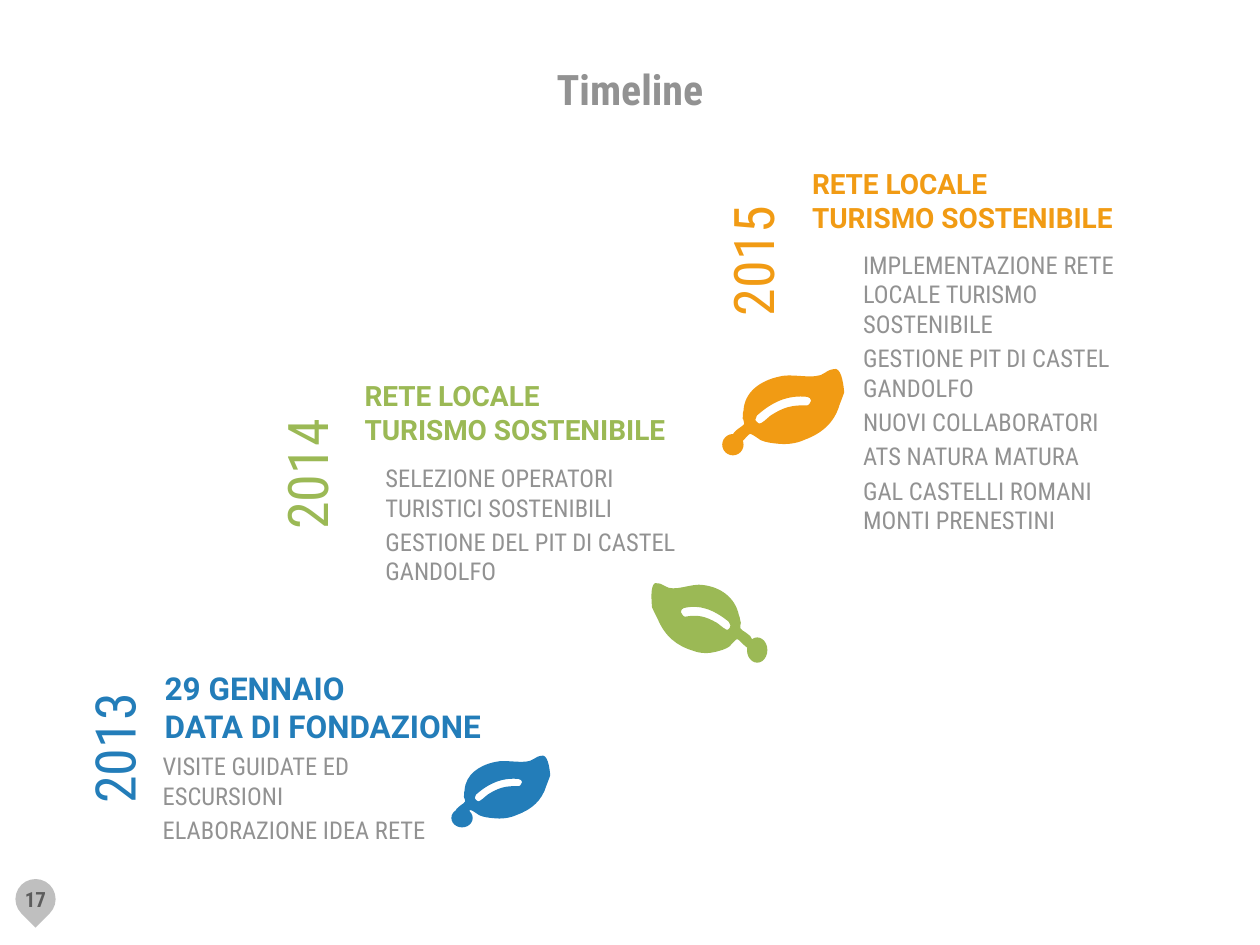
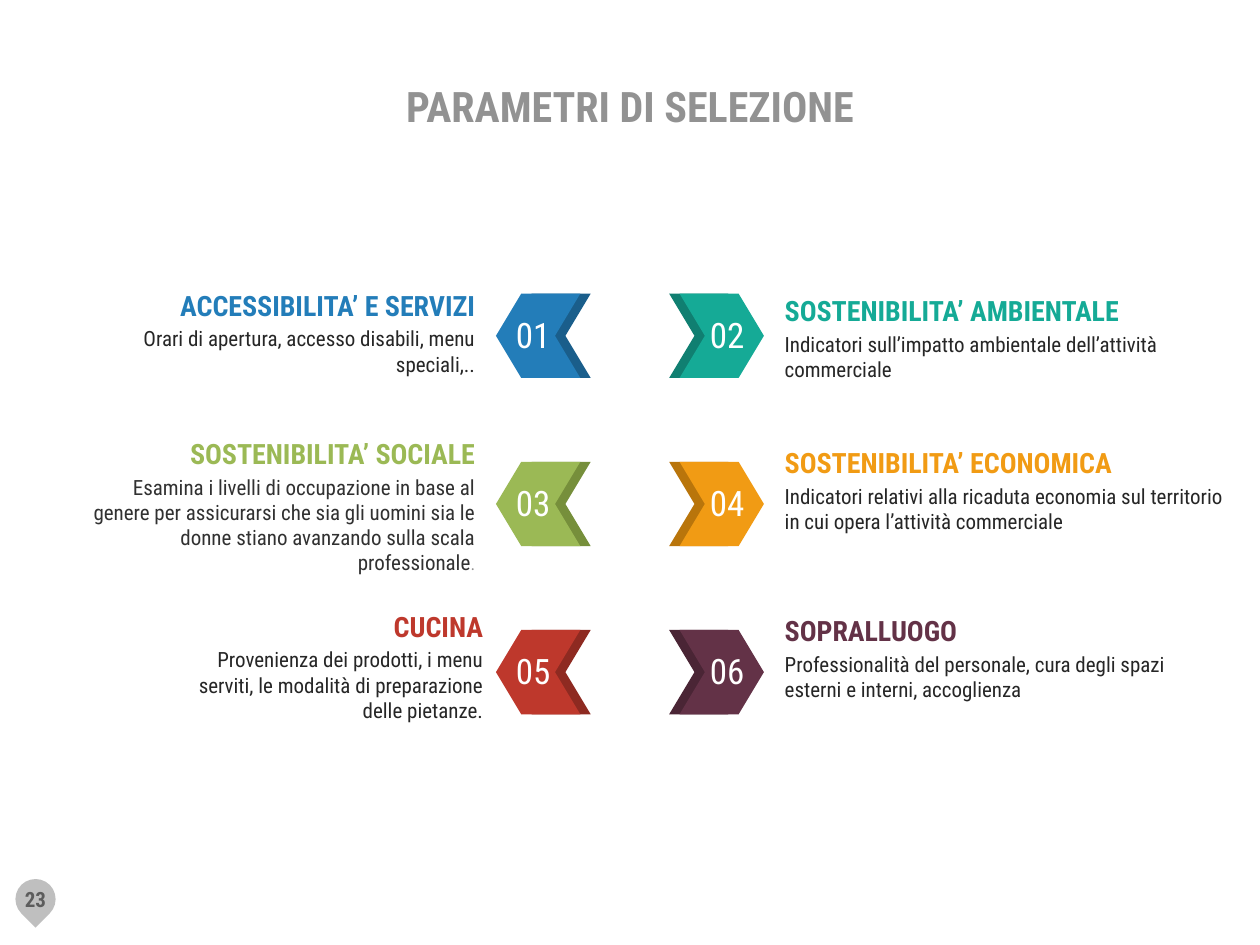
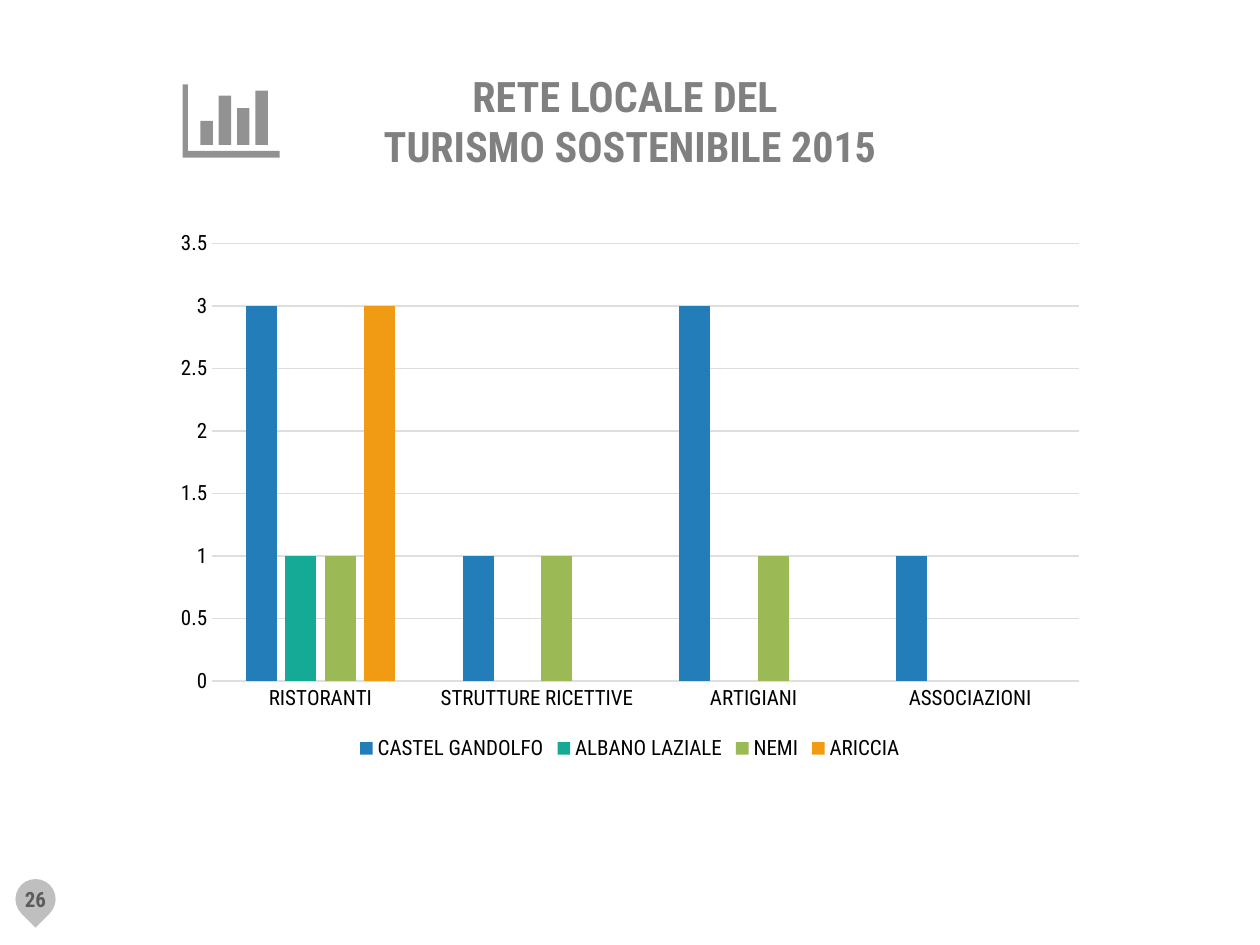
from dataclasses import dataclass

from lxml import etree
from pptx import Presentation
from pptx import util as u
from pptx.chart import data as cd
from pptx.dml import color as dml
from pptx.enum import chart as ch
from pptx.enum import shapes as es
from pptx.enum import text as et
from pptx.oxml import ns
from pptx.util import Cm


@dataclass(frozen=True)
class Theme:
    sans: str = "Roboto"
    condensed: str = "Roboto Condensed"
    blue: str = "237DB9"
    teal: str = "15AA96"
    green: str = "9BB955"
    orange: str = "F19B14"
    red: str = "BE382C"
    plum: str = "633247"
    grey: str = "929292"
    dark_grey: str = "808080"
    ink: str = "262626"
    soft_ink: str = "313131"
    black: str = "000000"
    white: str = "FFFFFF"
    grid: str = "DEDEDE"
    marker: str = "BFBFBF"
    marker_text: str = "5C5C5C"
    year_size: float = 32
    title_size: float = 24
    number_size: float = 20
    founding_size: float = 18
    heading_size: float = 16
    list_size: float = 14
    body_size: float = 12
    tail_size: float = 10


T = Theme()
Box = tuple[float, float, float, float]  # left, top, width, height in cm
Point = tuple[float, float]


@dataclass(frozen=True)
class Line:
    text: str
    size: float
    color: str
    bold: bool = False
    font: str = T.condensed
    tail: str = ""  # small grey ending


@dataclass(frozen=True)
class Milestone:
    year: str
    heading: tuple[str, str]
    items: tuple[str, ...]
    color: str
    year_at: Point
    heading_box: Box
    list_box: Box
    heading_size: float = T.heading_size


@dataclass(frozen=True)
class Leaf:
    color: str
    blade: Box
    stem: Box
    rotation: float
    mirrored: bool = False


@dataclass(frozen=True)
class Criterion:
    title: str
    text: str
    color: str
    shade: str
    box: Box
    ink: str = T.ink
    tail: str = ""


MILESTONES = (
    Milestone("2013", ("29 GENNAIO", "DATA DI FONDAZIONE"),
              ("VISITE GUIDATE ED ESCURSIONI", "ELABORAZIONE IDEA RETE"),
              T.blue, (0.77, 14.27), (3.32, 13.47, 6.91, 1.55),
              (3.28, 15.15, 5.87, 2.51), T.founding_size),
    Milestone("2014", ("RETE LOCALE", "TURISMO SOSTENIBILE"),
              ("SELEZIONE OPERATORI TURISTICI SOSTENIBILI",
               "GESTIONE DEL PIT DI CASTEL GANDOLFO"),
              T.green, (4.65, 8.75), (7.35, 7.63, 6.58, 1.37),
              (7.77, 9.34, 5.87, 2.51)),
    Milestone("2015", ("RETE LOCALE", "TURISMO SOSTENIBILE"),
              ("IMPLEMENTAZIONE RETE LOCALE TURISMO SOSTENIBILE",
               "GESTIONE PIT DI CASTEL GANDOLFO", "NUOVI COLLABORATORI",
               "ATS NATURA MATURA", "GAL CASTELLI ROMANI MONTI PRENESTINI"),
              T.orange, (13.64, 4.44), (16.37, 3.35, 6.58, 1.37),
              (17.4, 5.04, 5.87, 5.87)),
)

LEAVES = (
    Leaf(T.green, (13.22, 11.55, 1.8, 1.75), (15.06, 12.85, 0.41, 0.51), -14.5, True),
    Leaf(T.orange, (14.83, 7.34, 2.15, 1.73), (14.56, 8.75, 0.43, 0.43), 6.2),
    Leaf(T.blue, (9.23, 15.15, 1.83, 1.45), (9.1, 16.3, 0.43, 0.38), 6.2),
)

# Bezier points of the leaf, in percent of its frame: start, then three per curve
BLADE = (
    (97, 41), (94, 62), (84, 76), (68, 86), (60, 92), (51, 94), (43, 94),
    (38, 94), (32, 94), (27, 92), (24, 90), (20, 87), (17, 86),
    (14, 86), (10, 100), (5, 100), (3, 100), (2, 98), (0, 94),
    (0, 94), (0, 92), (0, 92), (0, 84), (10, 78), (10, 75),
    (10, 75), (9, 70), (8, 69), (9, 66), (7, 65), (8, 60),
    (7, 38), (21, 23), (38, 16), (50, 10), (72, 16), (80, 6),
    (83, 3), (85, 1), (90, 0), (96, 1), (99, 20), (100, 26),
    (99, 32), (98, 36), (97, 41),
)
VEIN = (
    (66, 36), (48, 36), (34, 46), (21, 64), (21, 66), (20, 66), (20, 69),
    (20, 70), (23, 73), (24, 73), (24, 73), (26, 72), (26, 72),
    (30, 68), (32, 64), (34, 62), (45, 51), (53, 47), (67, 46),
    (68, 46), (69, 44), (70, 40), (70, 38), (68, 36), (66, 36),
)

CRITERIA = (
    Criterion("ACCESSIBILITA’ E SERVIZI",
              "Orari di apertura, accesso disabili, menu speciali,..",
              T.blue, "1A5E8B", (2.11, 5.81, 7.47, 1.8)),
    Criterion("SOSTENIBILITA’ AMBIENTALE",
              "Indicatori sull’impatto ambientale dell’attività commerciale",
              T.teal, "107F71", (15.82, 5.92, 9.14, 1.8)),
    Criterion("SOSTENIBILITA’ SOCIALE",
              "Esamina i livelli di occupazione in base al genere per assicurarsi "
              "che sia gli uomini sia le donne stiano avanzando sulla scala "
              "professionale",
              T.green, "768F3B", (1.71, 8.8, 7.87, 2.84), T.soft_ink, "."),
    Criterion("SOSTENIBILITA’ ECONOMICA",
              "Indicatori relativi alla ricaduta economia sul territorio in cui "
              "opera l’attività commerciale",
              T.orange, "B9750B", (15.82, 8.99, 9.14, 1.8)),
    Criterion("CUCINA",
              "Provenienza dei prodotti, i menu serviti, le modalità di "
              "preparazione delle pietanze.",
              T.red, "8E2A21", (3.29, 12.28, 6.45, 2.34)),
    Criterion("SOPRALLUOGO",
              "Professionalità del personale, cura degli spazi esterni e interni, "
              "accoglienza",
              T.plum, "4A2535", (15.82, 12.37, 7.87, 1.8)),
)

CATEGORIES = ("RISTORANTI", "STRUTTURE RICETTIVE", "ARTIGIANI", "ASSOCIAZIONI")
SERIES = (
    ("CASTEL GANDOLFO", (3, 1, 3, 1), T.blue),
    ("ALBANO LAZIALE", (1, None, None, None), T.teal),
    ("NEMI", (1, 1, 1, None), T.green),
    ("ARICCIA", (3, None, None, None), T.orange),
)


# Shared helpers
def cm(box: Box) -> list[int]:
    return [Cm(v) for v in box]


def rgb(value: str) -> dml.RGBColor:
    return dml.RGBColor.from_string(value)


def set_font(font, size: float, color: str, bold: bool = False,
             name: str = T.condensed) -> None:
    font.size, font.bold, font.name = u.Pt(size), bold, name
    font.color.rgb = rgb(color)


def paint(sp, color: str) -> None:
    sp.fill.solid()
    sp.fill.fore_color.rgb = rgb(color)
    sp.line.fill.background()
    sp.shadow.inherit = False


def write(tf, lines: list[Line], align=et.PP_ALIGN.LEFT, anchor=et.MSO_ANCHOR.TOP,
          wrap: bool = True, inset: bool = False, spaced: bool = False) -> None:
    tf.auto_size = et.MSO_AUTO_SIZE.NONE
    tf.word_wrap, tf.vertical_anchor = wrap, anchor
    if not inset:
        tf.margin_left = tf.margin_top = tf.margin_right = tf.margin_bottom = 0
    for i, line in enumerate(lines):
        p = tf.add_paragraph() if i else tf.paragraphs[0]
        p.text, p.alignment = line.text, align
        p.space_before = u.Pt(0.2 * line.size if spaced and i else 0)
        if line.tail:
            set_font(p.runs[0].font, line.size, line.color, line.bold, line.font)
            r = p.add_run()
            r.text = line.tail
            set_font(r.font, T.tail_size, T.grey)
        else:
            set_font(p.font, line.size, line.color, line.bold, line.font)


def add_text(tree, box: Box, lines: list[Line], **layout):
    sp = tree.add_textbox(*cm(box))
    write(sp.text_frame, lines, **layout)
    return sp


def add_shape(tree, kind, box: Box, color: str):
    sp = tree.add_shape(kind, *cm(box))
    paint(sp, color)
    return sp


def add_outline(tree, contours: list[list[Point]], color: str):
    """Draw closed contours, given in cm, as one shape."""
    fb = None
    for contour in contours:
        points = [(Cm(x), Cm(y)) for x, y in contour]
        if fb is None:
            fb = tree.build_freeform(*points[0])
        else:
            fb.move_to(*points[0])
        fb.add_line_segments(points[1:], close=True)
    sp = fb.convert_to_shape()
    paint(sp, color)
    return sp


def bend(sp) -> None:
    """Turn every three line segments of an outline into one Bezier curve."""
    segments = list(sp.element.iter(ns.qn("a:lnTo")))
    for i in range(0, len(segments), 3):
        curve = etree.Element(ns.qn("a:cubicBezTo"))
        segments[i].addprevious(curve)
        for segment in segments[i:i + 3]:
            curve.append(segment[0])
            segment.getparent().remove(segment)


def new_slide(prs, title: str, box: Box, page: int, color: str = T.grey):
    slide = prs.slides.add_slide(prs.slide_layouts[5])
    sp = slide.shapes.title
    sp.left, sp.top, sp.width, sp.height = cm(box)
    write(sp.text_frame, [Line(title, T.title_size, color, True)],
          align=et.PP_ALIGN.CENTER, anchor=et.MSO_ANCHOR.MIDDLE, wrap=False)
    # Page marker
    drop = add_shape(slide.shapes, es.MSO_SHAPE.TEAR, (0.31, 17.72, 0.81, 0.81), T.marker)
    drop.rotation = 135.1
    add_text(slide.shapes, (0.08, 17.74, 1.27, 0.76),
             [Line(str(page), T.body_size, T.marker_text, True)],
             align=et.PP_ALIGN.CENTER, anchor=et.MSO_ANCHOR.MIDDLE, inset=True)
    return slide


# Timeline
def add_leaf(slide, leaf: Leaf) -> None:
    left, top, width, height = leaf.blade
    contours = [[(left + width * (100 - x if leaf.mirrored else x) / 100,
                  top + height * y / 100) for x, y in part]
                for part in (BLADE, VEIN)]
    tree = slide.shapes.add_group_shape().shapes
    blade = add_outline(tree, contours, leaf.color)
    bend(blade)
    blade.rotation = leaf.rotation
    add_shape(tree, es.MSO_SHAPE.OVAL, leaf.stem, leaf.color)


def add_milestone(slide, m: Milestone) -> None:
    tree = slide.shapes.add_group_shape().shapes
    year = add_text(tree, (*m.year_at, 3.05, 1.63), [Line(m.year, T.year_size, m.color)],
                    align=et.PP_ALIGN.CENTER, wrap=False, inset=True)
    year.rotation = 270
    add_text(tree, m.heading_box,
             [Line(s, m.heading_size, m.color, True, T.sans) for s in m.heading],
             anchor=et.MSO_ANCHOR.MIDDLE, wrap=False)
    add_text(tree, m.list_box, [Line(s, T.list_size, T.grey) for s in m.items], spaced=True)


def timeline(prs) -> None:
    slide = new_slide(prs, "Timeline", (4.87, 0.97, 15.66, 1.65), 17)
    for leaf in LEAVES:
        add_leaf(slide, leaf)
    for m in MILESTONES:
        add_milestone(slide, m)


# Selection criteria
def add_chevron(tree, left: float, top: float, color: str, flipped: bool) -> None:
    sp = add_shape(tree, es.MSO_SHAPE.CHEVRON, (left, top, 1.7, 1.7), color)
    sp.adjustments[0] = 0.3
    if flipped:
        sp.element.spPr.get_or_add_xfrm().set("flipH", "1")


def criteria(prs) -> None:
    slide = new_slide(prs, "PARAMETRI DI SELEZIONE", (4.87, 1.64, 15.66, 0.99), 23)
    for i, c in enumerate(CRITERIA):
        row, on_right = divmod(i, 2)
        top = 5.92 + 3.39 * row
        shade_x, front_x, number_x = (13.49, 13.7, 14.05) if on_right else (10.21, 10, 10.14)
        add_text(slide.shapes, c.box,
                 [Line(c.title, T.heading_size, c.color, True),
                  Line(c.text, T.body_size, c.ink, tail=c.tail)],
                 align=et.PP_ALIGN.LEFT if on_right else et.PP_ALIGN.RIGHT, spaced=True)
        badge = slide.shapes.add_group_shape().shapes
        add_chevron(badge, shade_x, top, c.shade, not on_right)
        add_chevron(badge, front_x, top, c.color, not on_right)
        add_text(badge, (number_x, top + 0.27, 1.22, 1.12),
                 [Line(f"{i + 1:02}", T.number_size, T.white)],
                 align=et.PP_ALIGN.CENTER, wrap=False, inset=True)


# Network chart
def add_chart_icon(slide) -> None:
    left, right, top, bottom = 3.68, 5.64, 1.7, 3.18
    axes = [(right, bottom), (left, bottom), (left, top), (left + 0.11, top),
            (left + 0.11, bottom - 0.14), (right, bottom - 0.14)]
    bars = []
    for i, bar_top in enumerate((2.44, 1.93, 2.18, 1.83)):
        x = 4.04 + 0.37 * i
        bars.append([(x + 0.25, 2.92), (x, 2.92), (x, bar_top), (x + 0.25, bar_top)])
    add_outline(slide.shapes, [axes, *bars], T.grey)


def style_line(line) -> None:
    line.color.rgb = rgb(T.grid)
    line.width = u.Pt(0.75)


def network(prs) -> None:
    slide = new_slide(prs, "RETE LOCALE DEL \vTURISMO SOSTENIBILE 2015",
                      (4.66, 1.06, 16.08, 2.74), 26, T.dark_grey)
    data = cd.CategoryChartData()
    data.categories = CATEGORIES
    for name, values, _ in SERIES:
        data.add_series(name, values)
    chart = slide.shapes.add_chart(ch.XL_CHART_TYPE.COLUMN_CLUSTERED,
                                   *cm((3.27, 4.44, 18.85, 11)), data).chart
    set_font(chart.font, T.tail_size, T.black)
    chart.has_title = False
    chart.has_legend = True
    chart.legend.position = ch.XL_LEGEND_POSITION.BOTTOM
    chart.legend.include_in_layout = False
    set_font(chart.legend.font, T.body_size, T.black)

    plot = chart.plots[0]
    plot.gap_width, plot.overlap, plot.vary_by_categories = 219, -27, False
    for series, (_, _, color) in zip(plot.series, SERIES):
        series.format.fill.solid()
        series.format.fill.fore_color.rgb = rgb(color)

    for axis in (chart.category_axis, chart.value_axis):
        axis.major_tick_mark = axis.minor_tick_mark = ch.XL_TICK_MARK.NONE
        set_font(axis.tick_labels.font, T.body_size, T.black)
    style_line(chart.category_axis.format.line)
    values = chart.value_axis
    values.minimum_scale, values.maximum_scale, values.major_unit = 0, 3.5, 0.5
    values.format.line.fill.background()
    style_line(values.major_gridlines.format.line)
    add_chart_icon(slide)


def main() -> None:
    prs = Presentation()
    prs.slide_width, prs.slide_height = Cm(25.4), Cm(19.05)
    timeline(prs)
    criteria(prs)
    network(prs)
    prs.save("out.pptx")


if __name__ == "__main__":
    main()
